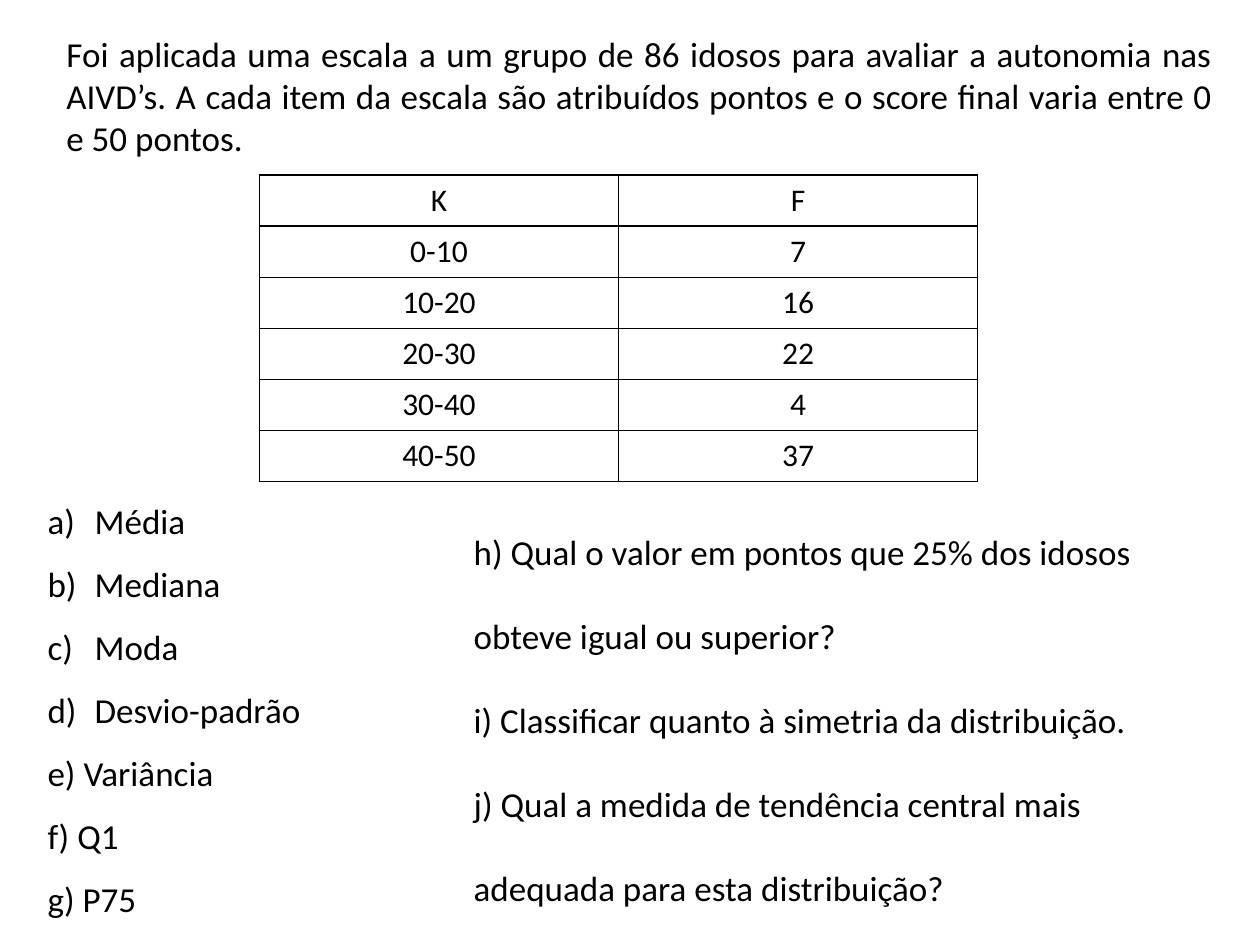
from lxml.etree import SubElement
from pptx import Presentation
from pptx.dml.color import RGBColor
from pptx.enum.text import MSO_ANCHOR, MSO_AUTO_SIZE, PP_ALIGN
from pptx.oxml.ns import qn
from pptx.util import Cm, Pt

BLACK = RGBColor(0, 0, 0)
BORDER_WIDTH = Pt(1)
HANGING_INDENT = Cm(0.95)

INTRODUCTION = (
    "Foi aplicada uma escala a um grupo de 86 idosos para avaliar a autonomia nas "
    "AIVD’s. A cada item da escala são atribuídos pontos e o score final varia entre 0 "
    "e 50 pontos."
)
FREQUENCIES = [
    ("K", "F"),
    ("0-10", "7"),
    ("10-20", "16"),
    ("20-30", "22"),
    ("30-40", "4"),
    ("40-50", "37"),
]
NUMBERED_MEASURES = ["Média", "Mediana", "Moda", "Desvio-padrão"]
OTHER_MEASURES = ["e) Variância", "f) Q1", "g) P75"]
QUESTIONS = [
    "h) Qual o valor em pontos que 25% dos idosos obteve igual ou superior?",
    "i) Classificar quanto à simetria da distribuição.",
    "j) Qual a medida de tendência central mais adequada para esta distribuição?",
]


class SlideBuilder:
    font_name = "Calibri"
    text_size = Pt(20)
    table_size = Pt(18)

    def __init__(self, slide):
        self.slide = slide

    def format_runs(self, paragraph, size):
        for run in paragraph.runs:
            run.font.name = self.font_name
            run.font.size = size
            run.font.bold = False
            run.font.color.rgb = BLACK

    def add_text(self, left, top, width, height, lines, spacing=1.0,
                 alignment=PP_ALIGN.LEFT, numbered=0):
        shape = self.slide.shapes.add_textbox(Cm(left), Cm(top), Cm(width), Cm(height))
        text_frame = shape.text_frame
        text_frame.word_wrap = True
        text_frame.auto_size = MSO_AUTO_SIZE.SHAPE_TO_FIT_TEXT
        text_frame.text = "\n".join(lines)
        for index, paragraph in enumerate(text_frame.paragraphs):
            paragraph.alignment = alignment
            paragraph.line_spacing = spacing
            self.format_runs(paragraph, self.text_size)
            if index < numbered:
                self.number_paragraph(paragraph)

    def number_paragraph(self, paragraph):
        properties = paragraph._p.get_or_add_pPr()
        properties.set("marL", str(HANGING_INDENT))
        properties.set("indent", str(-HANGING_INDENT))
        SubElement(properties, qn("a:buFont"), typeface="+mj-lt")
        SubElement(properties, qn("a:buAutoNum"), type="alphaLcParenR")

    def add_table(self, left, top, width, height, rows):
        shape = self.slide.shapes.add_table(
            len(rows), len(rows[0]), Cm(left), Cm(top), Cm(width), Cm(height))
        table = shape.table
        table.first_row = False
        table.horz_banding = False
        for row, values in zip(table.rows, rows):
            for cell, value in zip(row.cells, values):
                cell.text_frame.text = value
                cell.vertical_anchor = MSO_ANCHOR.TOP
                paragraph = cell.text_frame.paragraphs[0]
                paragraph.alignment = PP_ALIGN.CENTER
                self.format_runs(paragraph, self.table_size)
                self.add_borders(cell)
                cell.fill.background()

    def add_borders(self, cell):
        properties = cell._tc.get_or_add_tcPr()
        for side in ("L", "R", "T", "B"):
            line = SubElement(properties, qn(f"a:ln{side}"), w=str(BORDER_WIDTH))
            fill = SubElement(line, qn("a:solidFill"))
            SubElement(fill, qn("a:srgbClr"), val=str(BLACK))


def main():
    presentation = Presentation()
    presentation.slide_width = Cm(25.4)
    presentation.slide_height = Cm(19.05)
    slide = presentation.slides.add_slide(presentation.slide_layouts[6])
    builder = SlideBuilder(slide)
    builder.add_table(5.23, 3.53, 14.48, 6.18, FREQUENCIES)
    builder.add_text(0.71, 9.53, 10.49, 9.25, NUMBERED_MEASURES + OTHER_MEASURES,
                     spacing=1.5, numbered=len(NUMBERED_MEASURES))
    builder.add_text(1.09, 0.53, 23.6, 2.82, [INTRODUCTION],
                     alignment=PP_ALIGN.JUSTIFY)
    builder.add_text(9.3, 9.73, 14.81, 8.81, QUESTIONS, spacing=2.0)
    presentation.save("out.pptx")


if __name__ == "__main__":
    main()
